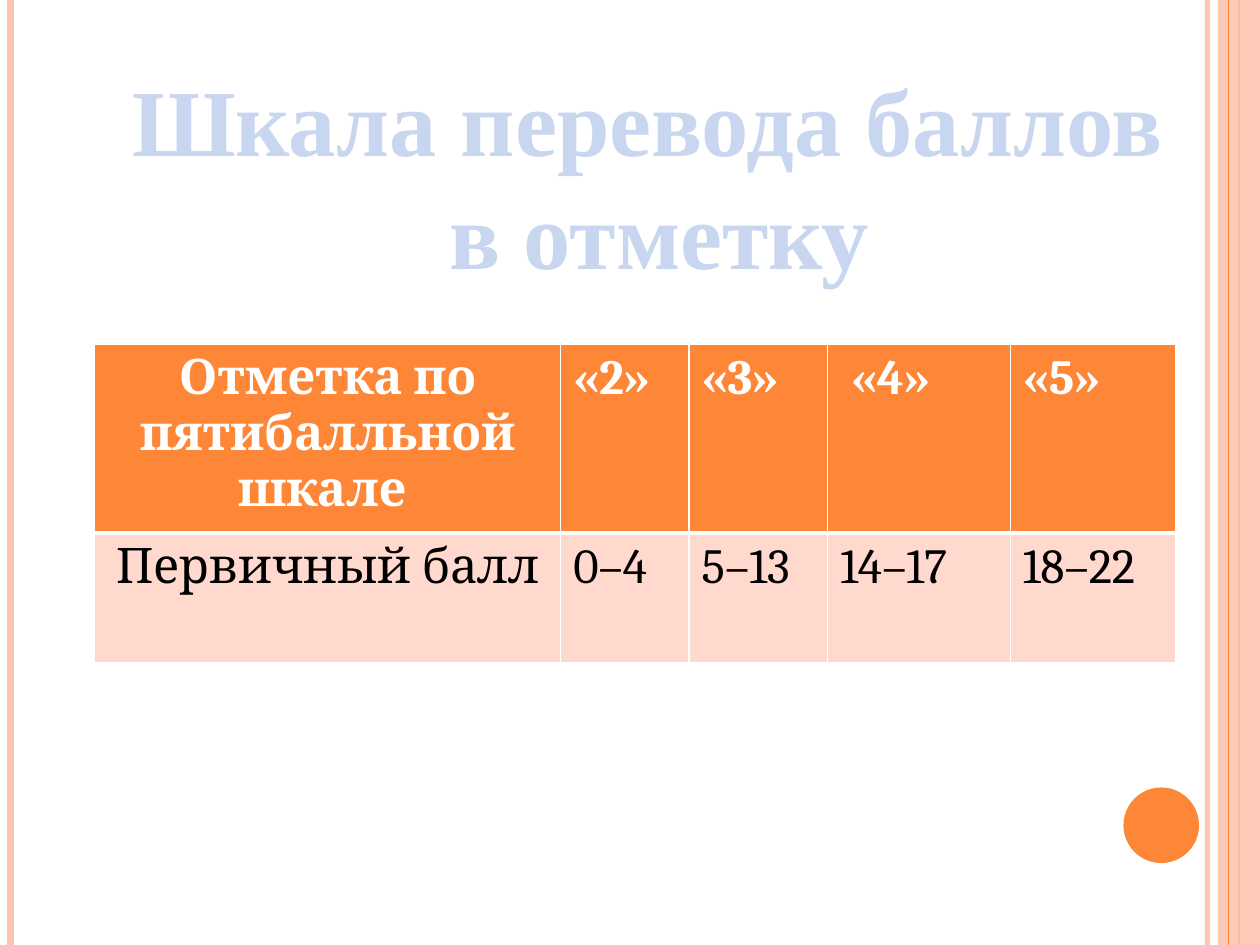
from lxml.etree import SubElement
from pptx import Presentation
from pptx.dml.color import RGBColor
from pptx.enum.shapes import MSO_CONNECTOR as Connector, MSO_SHAPE as Shape
from pptx.enum.text import MSO_AUTO_SIZE as AutoSize, PP_ALIGN as Align
from pptx.oxml import parse_xml
from pptx.oxml.ns import nsdecls, qn
from pptx.util import Pt

WHITE = RGBColor(0xFF, 0xFF, 0xFF)
BLACK = RGBColor(0x00, 0x00, 0x00)
ORANGE = RGBColor(0xFE, 0x86, 0x37)
PEACH = RGBColor(0xFE, 0xC3, 0xAE)
PALE = RGBColor(0xFF, 0xD9, 0xCE)
SKY = RGBColor(0xC8, 0xD6, 0xF0)
BLUE = RGBColor(0x75, 0x98, 0xD9)

TITLE = {"name": "Times New Roman", "size": Pt(54), "bold": True}
HEADER = {"name": "Cambria", "size": Pt(28), "bold": True}
BODY = {**HEADER, "bold": False}

WIDTH, HEIGHT = 720, 540


class SlideBuilder:
    def __init__(self, deck):
        self.page = deck.slides.add_slide(deck.slide_layouts[6])
        self.shapes = self.page.shapes

    def stroke(self, tag, color, width):
        return parse_xml(
            f'<a:{tag} {nsdecls("a")} w="{Pt(width)}"><a:solidFill>'
            f'<a:srgbClr val="{color}"/></a:solidFill></a:{tag}>'
        )

    def fade(self, element, percent):
        for color in element.iter(qn("a:srgbClr")):
            SubElement(color, qn("a:alpha"), val=str(percent * 1000))

    def add_span(self, para, text, style, color, align):
        para.alignment = align
        span = para.add_run()
        span.text = text
        for key, value in style.items():
            setattr(span.font, key, value)
        span.font.color.rgb = color
        return span

    def stripe(self, x, color, width, opacity=100):
        line = self.shapes.add_connector(
            Connector.STRAIGHT, Pt(x), Pt(0), Pt(x), Pt(HEIGHT))
        line.line.color.rgb = color
        line.line.width = Pt(width)
        properties = line._element.spPr
        SubElement(properties, qn("a:effectLst"))
        if opacity < 100:
            self.fade(properties, opacity)

    def shape(self, kind, left, top, width, height, color, opacity=100):
        shape = self.shapes.add_shape(
            kind, Pt(left), Pt(top), Pt(width), Pt(height))
        shape.shadow.inherit = False
        shape.fill.solid()
        shape.fill.fore_color.rgb = color
        shape.line.fill.background()
        if opacity < 100:
            self.fade(shape._element.spPr, opacity)

    def title(self, left, top, width, height, lines):
        box = self.shapes.add_textbox(
            Pt(left), Pt(top), Pt(width), Pt(height))
        frame = box.text_frame
        frame.word_wrap = False
        frame.auto_size = AutoSize.SHAPE_TO_FIT_TEXT
        for index, text in enumerate(lines):
            para = frame.add_paragraph() if index else frame.paragraphs[0]
            span = self.add_span(para, text, TITLE, SKY, Align.CENTER)
            span.font._element.insert(0, self.stroke("ln", BLUE, 1.75))

    def table(self, left, top, widths, heights, rows):
        table = self.shapes.add_table(
            len(rows), len(widths), Pt(left), Pt(top),
            Pt(sum(widths)), Pt(sum(heights))).table
        for column, width in zip(table.columns, widths):
            column.width = Pt(width)
        for row, height in zip(table.rows, heights):
            row.height = Pt(height)
        looks = [(HEADER, WHITE, ORANGE, (1, 1, 1, 3)),
                 (BODY, BLACK, PALE, (1, 1, 3, 1))]
        for row, texts, look in zip(table.rows, rows, looks):
            style, color, fill, borders = look
            for index, (cell, text) in enumerate(zip(row.cells, texts)):
                align = Align.LEFT if index else Align.CENTER
                self.add_span(cell.text_frame.paragraphs[0],
                              text, style, color, align)
                cell.fill.solid()
                cell.fill.fore_color.rgb = fill
                properties = cell._tc.get_or_add_tcPr()
                for place, (side, width) in enumerate(zip("LRTB", borders)):
                    properties.insert(
                        place, self.stroke(f"ln{side}", WHITE, width))


def main():
    deck = Presentation()
    deck.slide_width, deck.slide_height = Pt(WIDTH), Pt(HEIGHT)
    slide = SlideBuilder(deck)
    slide.stripe(690, PEACH, 3, 93)
    slide.stripe(6, PEACH, 4.5)
    slide.stripe(708, ORANGE, 1.5)
    slide.shape(Shape.RECTANGLE, 696, 0, 24, HEIGHT, PEACH, 87)
    slide.stripe(702, ORANGE, 0.75)
    slide.shape(Shape.OVAL, 642, 450, 43.2, 43.2, ORANGE)
    slide.table(
        54, 196.5, [266.4, 73.4, 79.2, 104.4, 94.3], [108, 74],
        [["Отметка по пятибалльной шкале ", "«2»", "«3»", " «4»", "«5»"],
         ["Первичный балл", "0–4", "5–13", "14–17", "18–22"]])
    slide.title(65.5, 31.7, 609, 138.2,
                ["Шкала перевода баллов", " в отметку"])
    deck.save("out.pptx")


if __name__ == "__main__":
    main()
